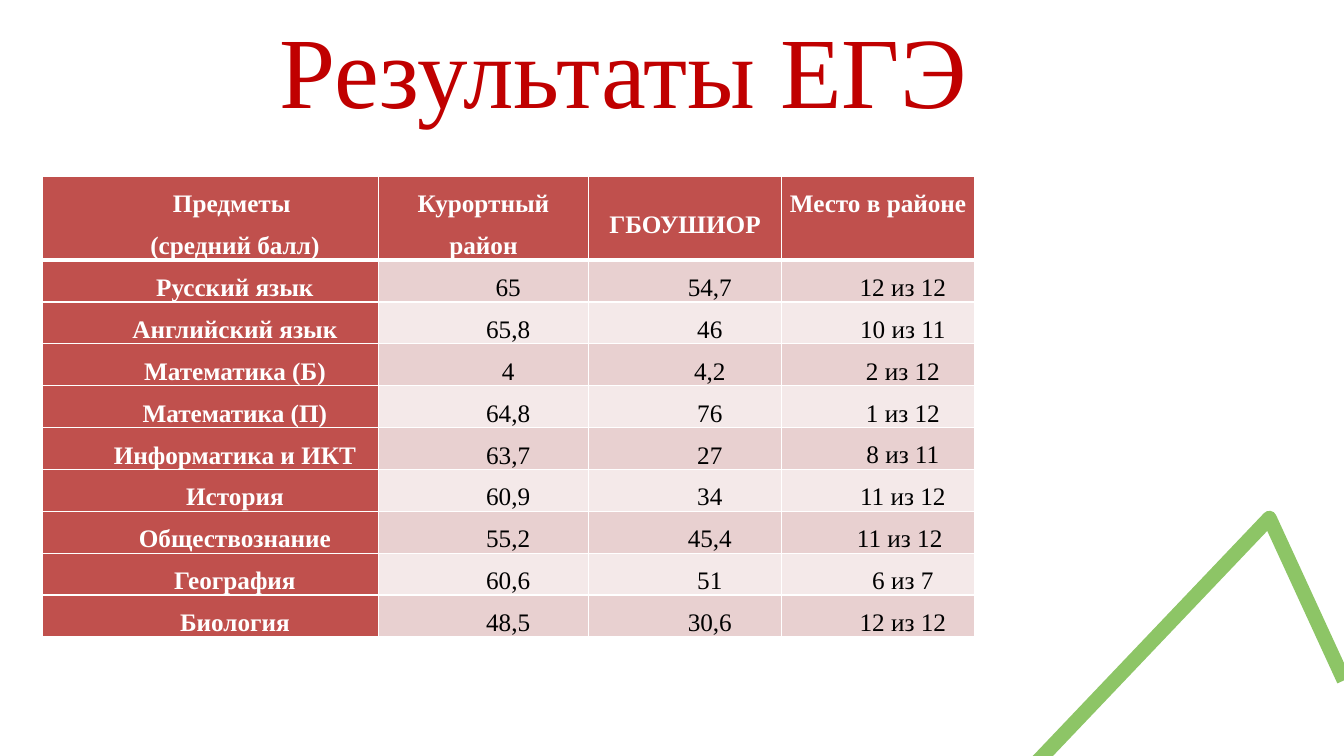
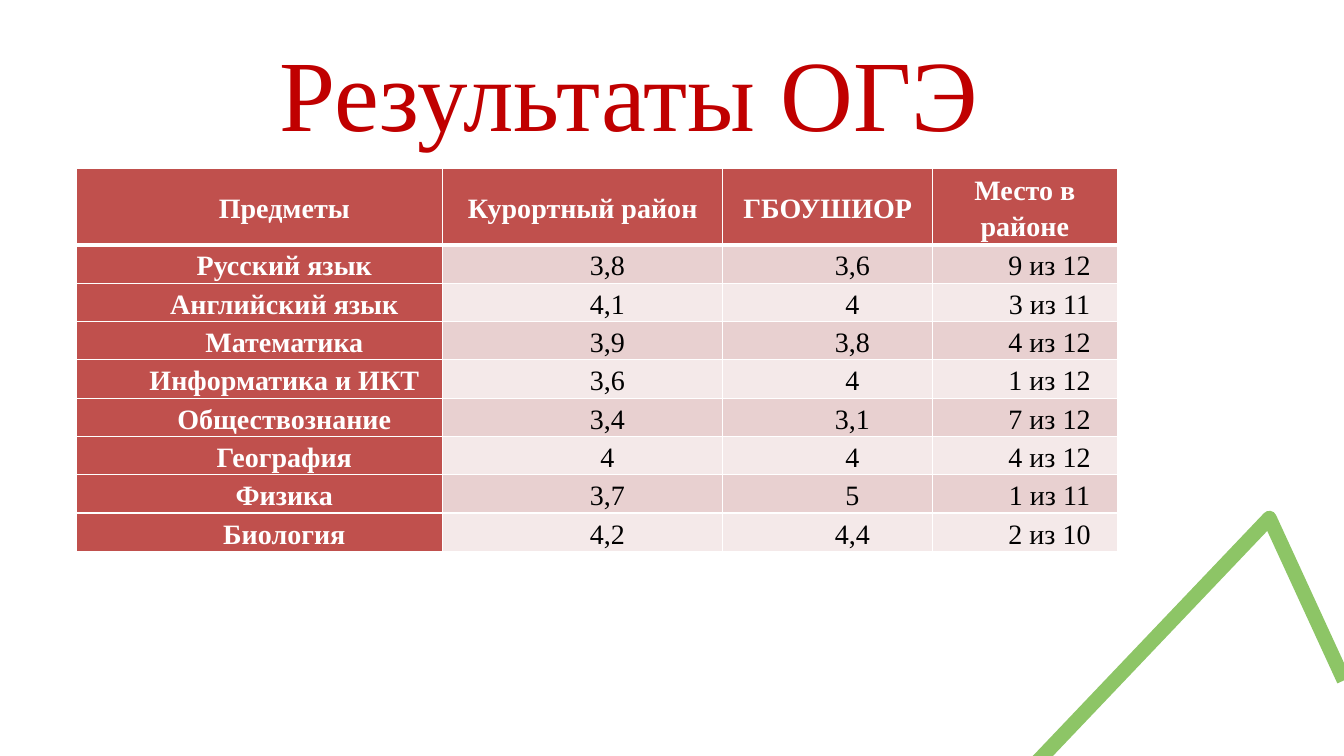
from dataclasses import dataclass

from lxml import etree
from pptx import Presentation
from pptx.dml.color import RGBColor
from pptx.enum.text import MSO_ANCHOR, MSO_AUTO_SIZE, PP_ALIGN
from pptx.oxml.ns import qn
from pptx.slide import Slide
from pptx.table import _Cell
from pptx.util import Inches, Pt

LEFT, CENTER = PP_ALIGN.LEFT, PP_ALIGN.CENTER
TOP, MIDDLE = MSO_ANCHOR.TOP, MSO_ANCHOR.MIDDLE
NO_AUTOFIT = MSO_AUTO_SIZE.NONE
TITLE_ONLY = 5


@dataclass(frozen=True)
class Theme:
    font: str = "Times New Roman"
    title_size: int = 72
    title_color: str = "C00000"
    header_fill: str = "C0504D"
    header_text: str = "FFFFFF"
    band_fills: tuple[str, str] = ("E8D0D0", "F4E9E9")
    body_text: str = "000000"
    border: str = "FFFFFF"
    thin: int = 1
    thick: int = 3
    peak_color: str = "8DC566"
    peak_width: float = 10.44
    first_indent: float = 0.49


@dataclass(frozen=True)
class Results:
    title: str
    title_top: float
    left: float
    top: float
    columns: tuple[float, ...]
    header_height: float
    row_height: float
    text_size: int
    line_spacing: float
    side_margin: float
    place_anchor: MSO_ANCHOR
    header: tuple[str, ...]
    scores: tuple[tuple[str, ...], ...]


THEME = Theme()
PEAK = ((10.21, 7.64), (12.59, 5.14), (13.33, 6.75))

EXAMS = (
    Results(
        title="Результаты ЕГЭ", title_top=0.03, left=0.42, top=1.75,
        columns=(3.33, 2.09, 1.91, 1.92), header_height=0.82, row_height=0.41,
        text_size=18, line_spacing=1.5, side_margin=0.05, place_anchor=TOP,
        header=("Предметы \n(средний балл)", "Курортный\nрайон", "ГБОУШИОР", "Место в районе"),
        scores=(
            ("Русский язык", "65", "54,7", "12 из 12"),
            ("Английский язык", "65,8", "46", "10 из 11"),
            ("Математика (Б)", "4", "4,2", "2 из 12"),
            ("Математика (П)", "64,8", "76", "1 из 12"),
            ("Информатика и ИКТ", "63,7", "27", "8 из 11"),
            ("История", "60,9", "34", "11 из 12"),
            ("Обществознание", "55,2", "45,4", "11 из 12 "),
            ("География", "60,6", "51", "6 из 7"),
            ("Биология", "48,5", "30,6", "12 из 12"),
        ),
    ),
    Results(
        title="Результаты ОГЭ", title_top=0.25, left=0.76, top=1.67,
        columns=(3.63, 2.78, 2.08, 1.83), header_height=0.76, row_height=0.38,
        text_size=20, line_spacing=1.15, side_margin=0.02, place_anchor=MIDDLE,
        header=("Предметы", "Курортный район", "ГБОУШИОР", "Место в районе"),
        scores=(
            ("Русский язык", "3,8", "3,6", "9 из 12"),
            ("Английский язык", "4,1", "4", "3 из 11"),
            ("Математика", "3,9", "3,8", "4 из 12"),
            ("Информатика и ИКТ", "3,6", "4", "1 из 12"),
            ("Обществознание", "3,4", "3,1", "7 из 12"),
            ("География", "4", "4", "4 из 12"),
            ("Физика", "3,7", "5", "1 из 11"),
            ("Биология", "4,2", "4,4", "2 из 10"),
        ),
    ),
)


def rgb(color: str) -> RGBColor:
    return RGBColor.from_string(color)


def apply_format(target: object, values: dict[str, object]) -> None:
    for attribute, value in values.items():
        setattr(target, attribute, value)


def add_title(slide: Slide, exam: Results) -> None:
    title = slide.shapes.title
    apply_format(title, {
        "left": Inches(2.67), "top": Inches(exam.title_top),
        "width": Inches(7.33), "height": Inches(1.31),
    })
    frame = title.text_frame
    frame.text = exam.title
    apply_format(frame, {"word_wrap": True, "auto_size": NO_AUTOFIT, "vertical_anchor": TOP})
    heading = frame.paragraphs[0]
    heading.alignment = LEFT
    font = heading.runs[0].font
    apply_format(font, {"name": THEME.font, "size": Pt(THEME.title_size)})
    font.color.rgb = rgb(THEME.title_color)


def add_peak(slide: Slide) -> None:
    start, *rest = [(Inches(x), Inches(y)) for x, y in PEAK]
    builder = slide.shapes.build_freeform(*start)
    builder.add_line_segments(rest, close=False)
    peak = builder.convert_to_shape()
    peak.shadow.inherit = False
    peak.fill.background()
    peak.line.color.rgb = rgb(THEME.peak_color)
    peak.line.width = Pt(THEME.peak_width)
    etree.SubElement(peak.line._get_or_add_ln(), qn("a:round"))


def set_borders(cell: _Cell, top: int, bottom: int) -> None:
    properties = cell._tc.get_or_add_tcPr()
    widths = {"lnL": THEME.thin, "lnR": THEME.thin, "lnT": top, "lnB": bottom}
    for side, width in widths.items():
        border = etree.SubElement(properties, qn(f"a:{side}"), w=str(Pt(width)))
        fill = etree.SubElement(border, qn("a:solidFill"))
        etree.SubElement(fill, qn("a:srgbClr"), val=THEME.border)


def fill_cell(cell: _Cell, text: str, row: int, column: int, exam: Results) -> None:
    is_header = row == 0
    is_heading = is_header or column == 0
    is_place = column == len(exam.columns) - 1
    set_borders(
        cell,
        top=THEME.thick if row == 1 else THEME.thin,
        bottom=THEME.thick if is_header else THEME.thin,
    )
    cell.fill.solid()
    cell.fill.fore_color.rgb = rgb(
        THEME.header_fill if is_heading else THEME.band_fills[(row - 1) % 2]
    )
    apply_format(cell, {
        "margin_left": Inches(exam.side_margin), "margin_right": Inches(exam.side_margin),
        "margin_top": 0, "margin_bottom": 0,
        "vertical_anchor": exam.place_anchor if is_place else MIDDLE,
    })
    cell.text_frame.text = text
    for paragraph in cell.text_frame.paragraphs:
        apply_format(paragraph, {"alignment": CENTER, "line_spacing": exam.line_spacing})
        if column == 0 or not is_header:
            paragraph._p.get_or_add_pPr().set("indent", str(Inches(THEME.first_indent)))
        font = paragraph.runs[0].font
        apply_format(font, {
            "name": THEME.font, "size": Pt(exam.text_size), "bold": is_heading,
        })
        font.color.rgb = rgb(THEME.header_text if is_heading else THEME.body_text)


def add_results(slide: Slide, exam: Results) -> None:
    lines = (exam.header, *exam.scores)
    heights = [exam.header_height] + [exam.row_height] * len(exam.scores)
    table = slide.shapes.add_table(
        len(lines), len(exam.columns), Inches(exam.left), Inches(exam.top),
        Inches(sum(exam.columns)), Inches(sum(heights)),
    ).table
    apply_format(table, {"first_row": False, "horz_banding": False})
    for column, width in zip(table.columns, exam.columns):
        column.width = Inches(width)
    for row, height in zip(table.rows, heights):
        row.height = Inches(height)
    for row_index, line in enumerate(lines):
        for column_index, text in enumerate(line):
            fill_cell(table.cell(row_index, column_index), text, row_index, column_index, exam)


def main() -> None:
    deck = Presentation()
    apply_format(deck, {"slide_width": Inches(13.33), "slide_height": Inches(7.5)})
    for exam in EXAMS:
        slide = deck.slides.add_slide(deck.slide_layouts[TITLE_ONLY])
        add_peak(slide)
        add_title(slide, exam)
        add_results(slide, exam)
    deck.save("out.pptx")


if __name__ == "__main__":
    main()
